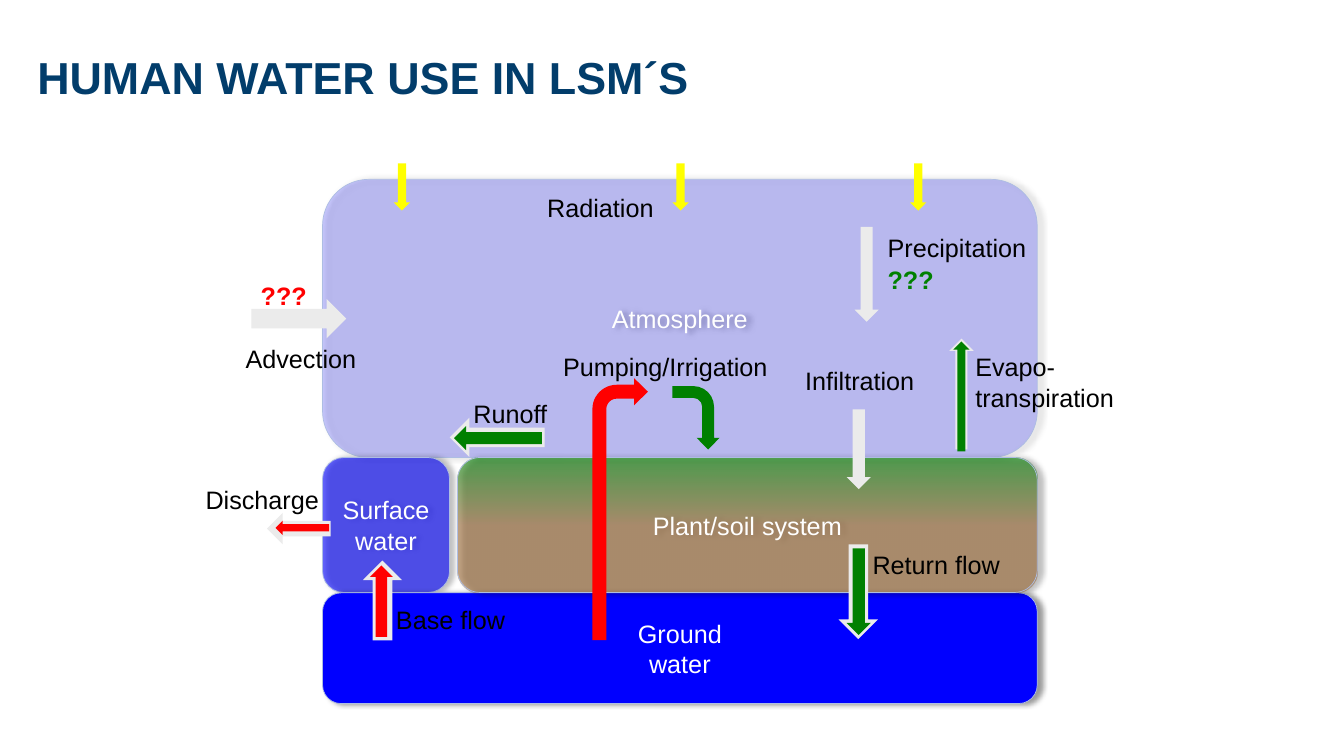
from pptx import Presentation
from pptx.dml.color import RGBColor
from pptx.enum.shapes import MSO_SHAPE
from pptx.enum.text import MSO_ANCHOR, MSO_AUTO_SIZE, PP_ALIGN
from pptx.oxml import parse_xml
from pptx.oxml.ns import nsdecls
from pptx.util import Cm, Pt

UP_ARROW, BENT_ARROW = MSO_SHAPE.UP_ARROW, MSO_SHAPE.BENT_ARROW
ROUNDED = MSO_SHAPE.ROUNDED_RECTANGLE
CENTER, LEFT = PP_ALIGN.CENTER, PP_ALIGN.LEFT
UP, RIGHT, DOWN, SIDE_LEFT = 0, 90, 180, 270

WHITE, BLACK, NAVY, BORDER = "FFFFFF", "000000", "023D6B", "ADBDE3"
BLUE, BROWN, GREEN = "0000FF", "996633", "008000"
RED, YELLOW, GRAY = "FF0000", "FFFF00", "EBEBEB"

TITLE = "HUMAN WATER USE IN LSM´S"
TITLE_BOX = (0.94, 1.07, 26.39, 3.18)

# Compartments: lines, (left, top, width, height), gradient stops (percent, colour, opacity)
COMPARTMENTS = [
    (["Atmosphere"], (8.13, 4.52, 18.01, 7.01), [(0, BLUE, 21), (100, BLUE, 21)]),
    (["Surface", "water"], (8.13, 11.53, 3.2, 3.4), [(0, BLUE, 60), (100, BLUE, 60)]),
    (["Ground", "water"], (8.13, 14.94, 18.01, 2.79), [(0, BLUE, 100), (100, BLUE, 100)]),
    (["Plant/soil system"], (11.53, 11.53, 14.61, 3.4),
     [(0, BROWN, 60), (50, BROWN, 60), (100, GREEN, 60)]),
]

# Straight flows: centre x, centre y, width, length, direction, colour
NATURAL_FLOWS = [
    (21.63, 14.91, 0.99, 2.39, DOWN, GRAY),       # return flow
    (12.53, 11.02, 0.99, 2.39, SIDE_LEFT, GRAY),  # runoff
    (21.84, 6.91, 0.61, 2.39, DOWN, GRAY),        # precipitation
    (21.64, 11.32, 0.61, 2.01, DOWN, GRAY),       # infiltration
    (24.23, 9.93, 0.61, 2.79, UP, GRAY),          # evapotranspiration
    (9.64, 15.13, 0.99, 2.01, UP, GRAY),          # base flow
    (7.53, 13.32, 0.79, 1.6, SIDE_LEFT, GRAY),    # discharge
    (7.53, 8.03, 0.99, 2.39, RIGHT, GRAY),        # advection
]
PUMPING_FLOWS = [
    (15.63, 12.83, 1.4, 6.6, UP, RED),
    (17.54, 10.53, 1.6, 1.19, RIGHT, GREEN),
]
CHANGED_FLOWS = [
    (21.64, 14.91, 0.61, 2.18, DOWN, GREEN),
    (7.62, 13.3, 0.36, 1.35, SIDE_LEFT, RED),
    (24.23, 9.99, 0.41, 2.77, UP, GREEN),
    (12.55, 11.04, 0.61, 2.21, SIDE_LEFT, GREEN),
    (9.61, 15.15, 0.58, 1.8, UP, RED),
]
RADIATION_FLOWS = [(x, 4.71, 0.41, 1.19, DOWN, YELLOW) for x in (10.13, 17.15, 23.14)]

# Labels: lines, left, top, width, colour, bold
LABELS = [
    (["Evapo-", "transpiration"], 24.33, 8.74, 4.04, BLACK, False),
    (["Return flow"], 21.74, 13.72, 3.78, BLACK, False),
    (["Runoff"], 11.68, 9.91, 2.44, BLACK, False),
    (["Infiltration"], 20.04, 9.09, 3.3, BLACK, False),
    (["Precipitation"], 22.12, 5.72, 4.04, BLACK, False),
    (["Radiation"], 13.54, 4.72, 3.23, BLACK, False),
    (["Pumping/Irrigation"], 13.94, 8.74, 5.72, BLACK, False),
    (["???"], 6.32, 6.93, 1.68, RED, True),
    (["???"], 22.12, 6.53, 1.68, GREEN, True),
    (["Advection"], 5.94, 8.53, 3.35, BLACK, False),
    (["Discharge"], 4.93, 12.09, 3.4, BLACK, False),
    (["Base flow"], 9.73, 15.11, 3.33, BLACK, False),
]


def rgb(value):
    return RGBColor.from_string(value)


def write(frame, lines, color, size=18, bold=False, align=LEFT):
    """Fill a text frame with one paragraph per line and return its runs."""
    runs = []
    for index, line in enumerate(lines):
        paragraph = frame.add_paragraph() if index else frame.paragraphs[0]
        paragraph.alignment = align
        run = paragraph.add_run()
        run.text = line
        for name, value in {"name": "Arial", "size": Pt(size), "bold": bold}.items():
            setattr(run.font, name, value)
        run.font.color.rgb = rgb(color)
        runs.append(run)
    return runs


def shadow_effect(opacity, blur, distance, angle):
    return parse_xml(
        f'<a:effectLst {nsdecls("a")}><a:outerShdw blurRad="{Pt(blur)}" dist="{Pt(distance)}" '
        f'dir="{angle * 60000}" algn="tl" rotWithShape="0"><a:srgbClr val="{BLACK}">'
        f'<a:alpha val="{opacity * 1000}"/></a:srgbClr></a:outerShdw></a:effectLst>')


def gradient_stop(position, color, opacity):
    return parse_xml(
        f'<a:gs {nsdecls("a")} pos="{position * 1000}"><a:srgbClr val="{color}">'
        f'<a:alpha val="{opacity * 1000}"/></a:srgbClr></a:gs>')


def add_compartment(slide, lines, box, stops):
    shape = slide.shapes.add_shape(ROUNDED, *map(Cm, box))
    if stops[0][1] == stops[-1][1]:
        shape.fill.solid()
        shape.fill.fore_color.rgb = rgb(stops[0][1])
        solid_color = shape.fill._xPr.find(".//{*}solidFill/{*}srgbClr")
        solid_color.append(gradient_stop(*stops[0])[0][0])
    else:
        shape.fill.gradient()
        shape.fill.gradient_angle = 90
        stop_list = shape.element.spPr.find(".//{*}gsLst")
        stop_list[:] = [gradient_stop(*stop) for stop in stops]
    shape.line.color.rgb = rgb(BORDER)
    shape.line.width = Pt(0.5)
    shape.element.spPr.append(shadow_effect(40, 4, 3, 0))
    shape.text_frame.word_wrap = True
    shape.text_frame.vertical_anchor = MSO_ANCHOR.MIDDLE
    for run in write(shape.text_frame, lines, WHITE, align=CENTER):
        run.font.fill._xPr.find("{*}solidFill").addnext(shadow_effect(100, 3, 2, 45))


def add_flow(slide, kind, center_x, center_y, width, length, direction, color):
    shape = slide.shapes.add_shape(kind, Cm(center_x - width / 2), Cm(center_y - length / 2),
                                   Cm(width), Cm(length))
    shape.rotation = direction
    if kind == BENT_ARROW:
        for index, value in enumerate((0.25, 0.244, 0.25, 0.438)):
            shape.adjustments[index] = value
    shape.fill.solid()
    shape.fill.fore_color.rgb = rgb(color)
    shape.line.fill.background()
    shape.shadow.inherit = False


def add_title(slide):
    frame = slide.shapes.add_textbox(*map(Cm, TITLE_BOX)).text_frame
    frame.word_wrap = True
    for side in ("left", "top", "right", "bottom"):
        setattr(frame, f"margin_{side}", 0)
    write(frame, [TITLE], NAVY, size=32, bold=True)
    frame.paragraphs[0].line_spacing = 1.14


def add_label(slide, lines, left, top, width, color, bold):
    height = 1.02 + 0.78 * (len(lines) - 1)
    frame = slide.shapes.add_textbox(Cm(left), Cm(top), Cm(width), Cm(height)).text_frame
    frame.word_wrap = False
    frame.auto_size = MSO_AUTO_SIZE.SHAPE_TO_FIT_TEXT
    write(frame, lines, color, bold=bold)


def main():
    presentation = Presentation()
    presentation.slide_width, presentation.slide_height = Cm(33.87), Cm(19.05)
    slide = presentation.slides.add_slide(presentation.slide_layouts[6])
    add_title(slide)
    for compartment in COMPARTMENTS:
        add_compartment(slide, *compartment)
    for kind, flows in ((UP_ARROW, NATURAL_FLOWS), (BENT_ARROW, PUMPING_FLOWS),
                        (UP_ARROW, CHANGED_FLOWS + RADIATION_FLOWS)):
        for flow in flows:
            add_flow(slide, kind, *flow)
    for label in LABELS:
        add_label(slide, *label)
    presentation.save("out.pptx")


if __name__ == "__main__":
    main()
